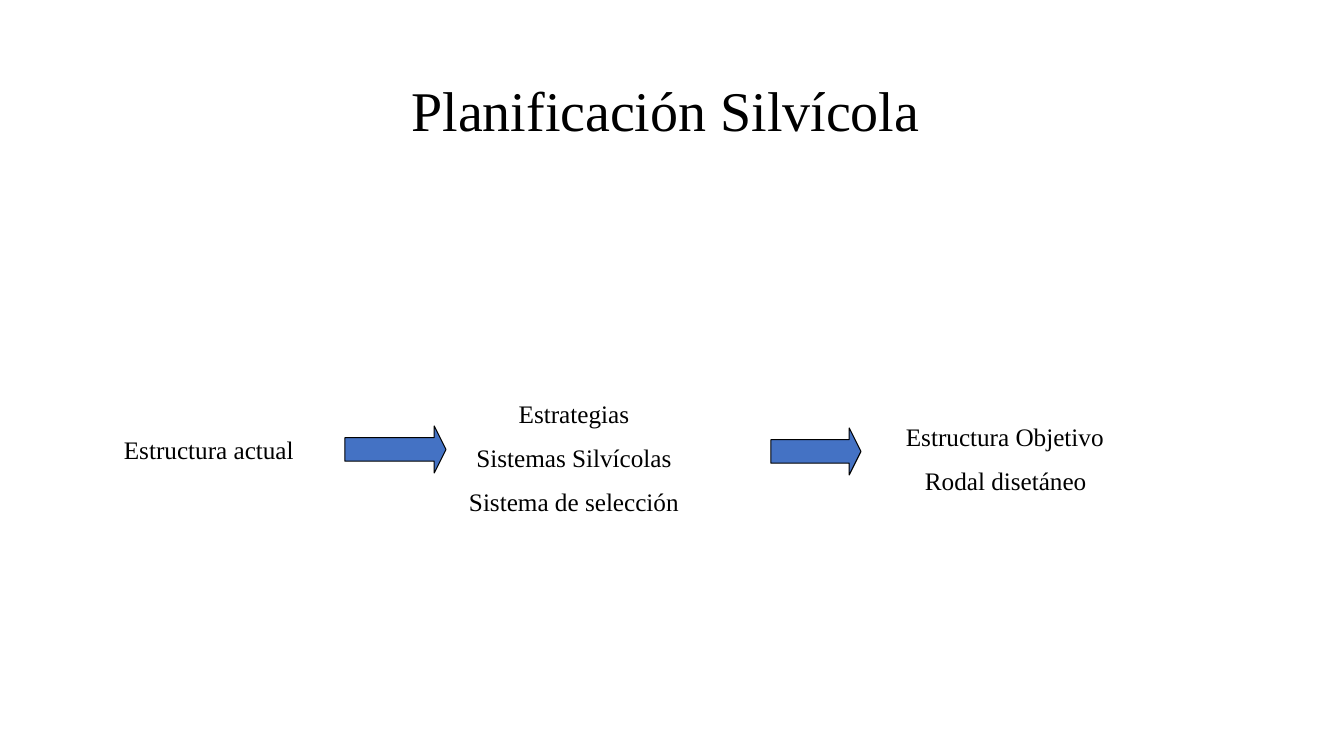
from dataclasses import dataclass

from pptx import Presentation
from pptx.dml.color import RGBColor
from pptx.enum.shapes import MSO_SHAPE as Shape
from pptx.enum.text import MSO_ANCHOR as Anchor, PP_ALIGN as Align
from pptx.util import Emu, Pt

PX_PER_INCH = 100.8
FONT = "Times New Roman"
BLACK = RGBColor(0x00, 0x00, 0x00)
WHITE = RGBColor(0xFF, 0xFF, 0xFF)
BLUE = RGBColor(0x44, 0x72, 0xC4)


@dataclass(frozen=True)
class Label:
    left: int
    top: int
    width: int
    height: int
    lines: tuple[str, ...]
    align: Align = Align.LEFT
    size: int = 18
    anchor: Anchor = Anchor.TOP
    line_spacing: float = 1.0
    right_inset: int = 10
    later_indent: int = 0


@dataclass(frozen=True)
class Arrow:
    left: int
    top: int
    width: int
    height: int = 47


LABELS = (
    # Title
    Label(93, 40, 1159, 146, ("Planificación Silvícola",), Align.CENTER,
          size=40, anchor=Anchor.MIDDLE, line_spacing=0.9, right_inset=24),
    # Three stages of the plan
    Label(114, 429, 214, 40, ("Estructura actual",)),
    Label(451, 393, 246, 132,
          ("Estrategias", "Sistemas Silvícolas", "Sistema de selección"),
          Align.CENTER),
    Label(896, 416, 254, 87, ("Estructura Objetivo", "Rodal disetáneo"),
          later_indent=19),
)
ARROWS = (Arrow(345, 426, 101), Arrow(771, 428, 90))


def px(length: int) -> Emu:
    return Emu(round(length * 914400 / PX_PER_INCH))


def add_label(slide, label: Label) -> None:
    box = slide.shapes.add_textbox(px(label.left), px(label.top),
                                   px(label.width), px(label.height))
    frame = box.text_frame
    frame.word_wrap = True
    frame.vertical_anchor = label.anchor
    frame.margin_right = px(label.right_inset)
    for index, line in enumerate(label.lines):
        para = frame.add_paragraph() if index else frame.paragraphs[0]
        para.alignment = label.align
        para.line_spacing = label.line_spacing
        if index:
            para.space_before = Pt(10)
            if label.later_indent:
                para._p.get_or_add_pPr().set("marL", str(px(label.later_indent)))
        span = para.add_run()
        span.text = line
        span.font.name = FONT
        span.font.size = Pt(label.size)
        span.font.color.rgb = BLACK


def add_arrow(slide, arrow: Arrow) -> None:
    shape = slide.shapes.add_shape(Shape.RIGHT_ARROW, px(arrow.left), px(arrow.top),
                                   px(arrow.width), px(arrow.height))
    shape.adjustments[0] = 0.5
    shape.adjustments[1] = 0.25
    shape.shadow.inherit = False
    shape.fill.solid()
    shape.fill.fore_color.rgb = BLUE
    shape.line.color.rgb = BLACK
    shape.line.width = Pt(0.75)


def main() -> None:
    deck = Presentation()
    deck.slide_width, deck.slide_height = px(1344), px(756)
    page = deck.slides.add_slide(deck.slide_layouts[6])
    page.background.fill.solid()
    page.background.fill.fore_color.rgb = WHITE

    for label in LABELS:
        add_label(page, label)
    for arrow in ARROWS:
        add_arrow(page, arrow)
    deck.save("out.pptx")


if __name__ == "__main__":
    main()
